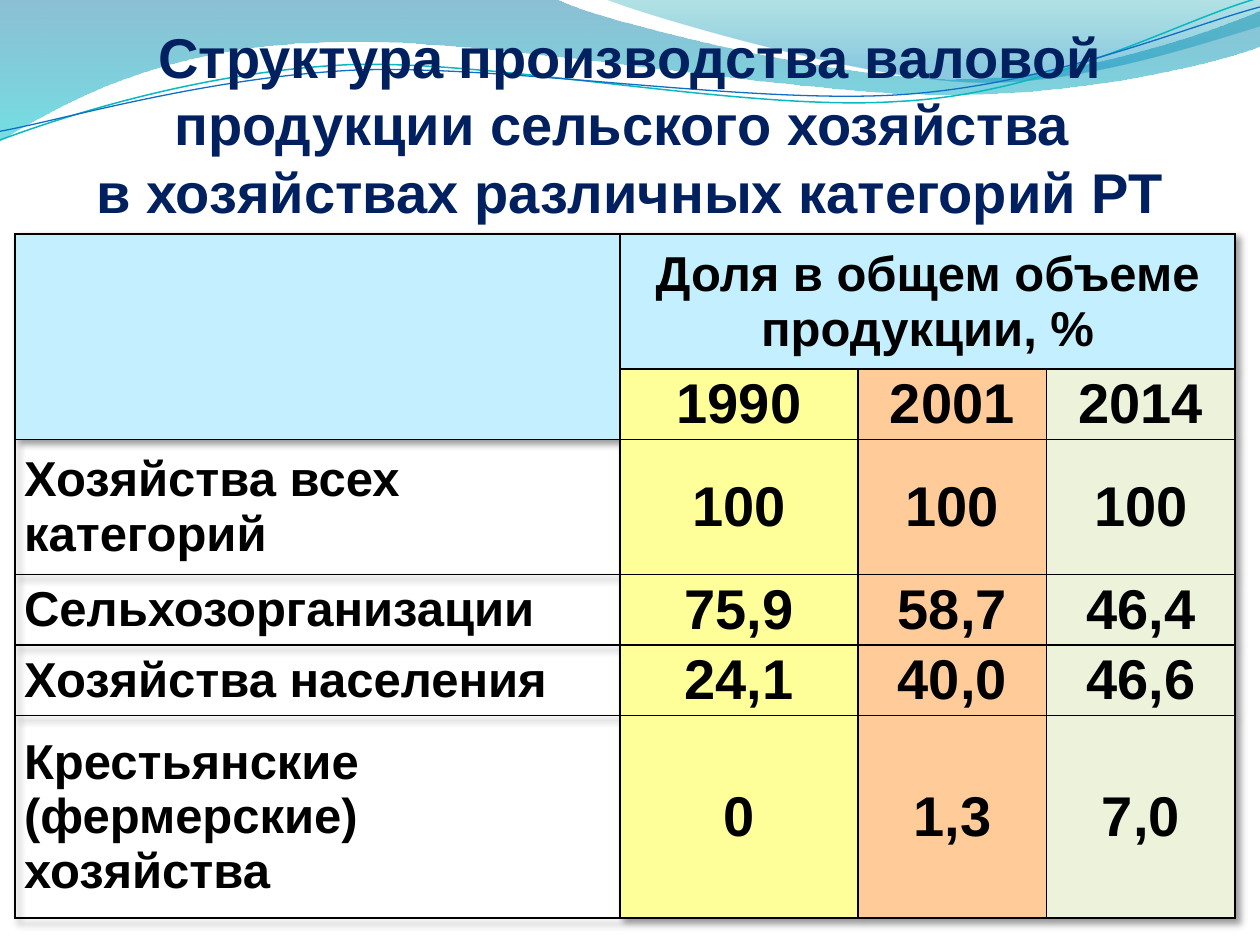
"""Build a slide with a table of farm output shares under a wave header."""
import dataclasses

import lxml.etree
import pptx
import pptx.dml.color
import pptx.enum.text
import pptx.oxml
import pptx.oxml.ns
import pptx.util

Pt = pptx.util.Pt
qn = pptx.oxml.ns.qn
CENTER = pptx.enum.text.PP_ALIGN.CENTER
LEFT = pptx.enum.text.PP_ALIGN.LEFT
MIDDLE = pptx.enum.text.MSO_ANCHOR.MIDDLE


@dataclasses.dataclass(frozen=True)
class Theme:
    font: str = "Arial"
    title: str = "002060"
    ink: str = "000000"
    header: str = "C4EFFF"
    years: tuple = ("FFFF99", "FFCC99", "EDF3DB")
    large: int = 32
    small: int = 28


THEME = Theme()
TITLE = ("Структура производства валовой продукции сельского хозяйства \n"
         "в хозяйствах различных категорий РТ")
ROWS = [
    ("", "Доля в общем объеме продукции, %", "", ""),
    ("", "1990", "2001", "2014"),
    ("Хозяйства всех категорий", "100", "100", "100"),
    ("Сельхозорганизации", "75,9", "58,7", "46,4"),
    ("Хозяйства населения", "24,1", "40,0", "46,6"),
    ("Крестьянские (фермерские) хозяйства", "0", "1,3", "7,0"),
]
WIDTHS = (345.6, 136, 107.8, 107.8)
HEIGHTS = (77.2, 40.2, 77.2, 40.2, 40.2, 115.9)
FILLED_WAVES = [
    ([(0, 0), (317, -1), (343, 12, 478, 45, 546, 45), (614, 45, 690, 19, 720, 6),
      (721, 26), (708, 32, 626, 55, 537, 54), (448, 54, 275, 20, 185, 24),
      (93, 26, 33, 60, -1, 81)],
     [(0, "0074A1", 45), (1, "00C6CF", 55)]),
    ([(345, -1), (366, 8, 491, 45, 554, 47), (616, 50, 692, 23, 720, 15), (720, 0)],
     [(0, "00A1A9", 30), (0.8, "008BBF", 45)]),
]
LINE_WAVES = [
    ([(0, 80), (35, 67, 114, 41, 199, 37), (284, 34, 427, 64, 513, 58),
      (600, 54, 675, 11, 719, -1)], "0AB8BF", 0.85),
    ([(0, 75), (34, 69, 118, 44, 204, 40), (290, 37, 430, 60, 516, 54),
      (602, 48, 678, 15, 720, 4)], "0F6FC6", 0.75),
]


def rgb(value):
    """Return a colour from its hex value."""
    return pptx.dml.color.RGBColor.from_string(value)


def apply(target, values):
    """Set each named attribute of the target."""
    for name, value in values.items():
        setattr(target, name, value)


def bend_segment(segment, step, wave):
    """Turn a straight segment of a wave into a cubic curve."""
    segment.tag = qn("a:cubicBezTo")
    for point in list(segment):
        segment.remove(point)
    for x, y in zip(step[::2], step[1::2]):
        lxml.etree.SubElement(segment, qn("a:pt"), x=str(Pt(x) - wave.left),
                              y=str(Pt(y) - wave.top))


def add_wave(page, steps, closed):
    """Draw a curved outline without a shadow."""
    points = [(Pt(step[-2]), Pt(step[-1])) for step in steps]
    builder = page.shapes.build_freeform(*points[0])
    builder.add_line_segments(points[1:], close=closed)
    wave = builder.convert_to_shape()
    wave.shadow.inherit = False
    segments = list(wave.element.iter(qn("a:lnTo")))
    for segment, step in zip(segments, steps[1:]):
        if len(step) == 6:
            bend_segment(segment, step, wave)
    return wave


def add_filled_wave(page, steps, stops):
    """Draw a wave with a translucent vertical gradient."""
    wave = add_wave(page, steps, True)
    wave.line.fill.background()
    wave.fill.gradient()
    wave.fill.gradient_angle = 270
    for stop, (position, color, _) in zip(wave.fill.gradient_stops, stops):
        stop.position = position
        stop.color.rgb = rgb(color)
    elements = list(wave.element.spPr.iter(qn("a:srgbClr")))
    for element, (_, _, opacity) in zip(elements, stops):
        lxml.etree.SubElement(element, qn("a:alpha"), val=str(opacity * 1000))


def add_line_wave(page, steps, color, width):
    """Draw a thin open wave."""
    wave = add_wave(page, steps, False)
    wave.fill.background()
    wave.line.color.rgb = rgb(color)
    wave.line.width = Pt(width)


def format_text(frame, size, color, alignment):
    """Give every paragraph of a frame one bold style."""
    for para in frame.paragraphs:
        para.alignment = alignment
        for span in para.runs:
            apply(span.font, {"name": THEME.font, "size": Pt(size), "bold": True})
            span.font.color.rgb = rgb(color)


def place_title(page):
    """Fill the title placeholder and bring it in front of the waves."""
    title = page.shapes.title
    apply(title, {"left": Pt(0), "top": Pt(9), "width": Pt(720), "height": Pt(123)})
    frame = title.text_frame
    frame.text = TITLE
    apply(frame, {"word_wrap": True, "vertical_anchor": MIDDLE,
                  "auto_size": pptx.enum.text.MSO_AUTO_SIZE.NONE})
    format_text(frame, THEME.large, THEME.title, CENTER)
    title.element.getparent().append(title.element)


def add_borders(cell):
    """Draw a thin line on all four sides of a cell."""
    properties = cell._tc.get_or_add_tcPr()
    for index, side in enumerate(("lnL", "lnR", "lnT", "lnB")):
        line = lxml.etree.Element(qn("a:" + side), w=str(Pt(1)))
        fill = lxml.etree.SubElement(line, qn("a:solidFill"))
        lxml.etree.SubElement(fill, qn("a:srgbClr"), val=THEME.ink)
        properties.insert(index, line)


def add_table_shadow(table):
    """Cast a soft shadow down and to the right of the table."""
    table._tbl.tblPr.insert(0, pptx.oxml.parse_xml(
        '<a:effectLst xmlns:a="http://schemas.openxmlformats.org/drawingml/2006/main">'
        '<a:outerShdw blurRad="50800" dist="38100" dir="2700000" algn="tl" rotWithShape="0">'
        '<a:srgbClr val="000000"><a:alpha val="40000"/></a:srgbClr>'
        '</a:outerShdw></a:effectLst>'))


def format_cell(cell, row, column, text):
    """Write one cell and style it by its place in the table."""
    if text:
        cell.text = text
    apply(cell, {"margin_left": Pt(5.1), "margin_right": Pt(5.1), "margin_top": 0,
                 "margin_bottom": 0, "vertical_anchor": MIDDLE})
    size = THEME.small if row == 0 or column == 0 else THEME.large
    format_text(cell.text_frame, size, THEME.ink, CENTER if column else LEFT)
    if row == 0 or (row == 1 and column == 0):
        color = THEME.header
    else:
        color = THEME.years[column - 1] if column else None
    if color:
        cell.fill.solid()
        cell.fill.fore_color.rgb = rgb(color)
    else:
        cell.fill.background()
    add_borders(cell)


def add_share_table(page):
    """Add the table of output shares by farm category and year."""
    table = page.shapes.add_table(len(ROWS), len(WIDTHS), Pt(8.7), Pt(133.8),
                                  Pt(sum(WIDTHS)), Pt(sum(HEIGHTS))).table
    apply(table, {"first_row": False, "horz_banding": False})
    for column, width in zip(table.columns, WIDTHS):
        column.width = Pt(width)
    for row, height in zip(table.rows, HEIGHTS):
        row.height = Pt(height)
    for row, texts in enumerate(ROWS):
        for column, text in enumerate(texts):
            format_cell(table.cell(row, column), row, column, text)
    table.cell(0, 0).merge(table.cell(1, 0))
    table.cell(0, 1).merge(table.cell(0, 3))
    add_table_shadow(table)


def main():
    """Build and save the deck."""
    deck = pptx.Presentation()
    apply(deck, {"slide_width": Pt(720), "slide_height": Pt(540)})
    page = deck.slides.add_slide(deck.slide_layouts[5])
    for wave in FILLED_WAVES:
        add_filled_wave(page, *wave)
    for wave in LINE_WAVES:
        add_line_wave(page, *wave)
    place_title(page)
    add_share_table(page)
    deck.save("out.pptx")


if __name__ == "__main__":
    main()
